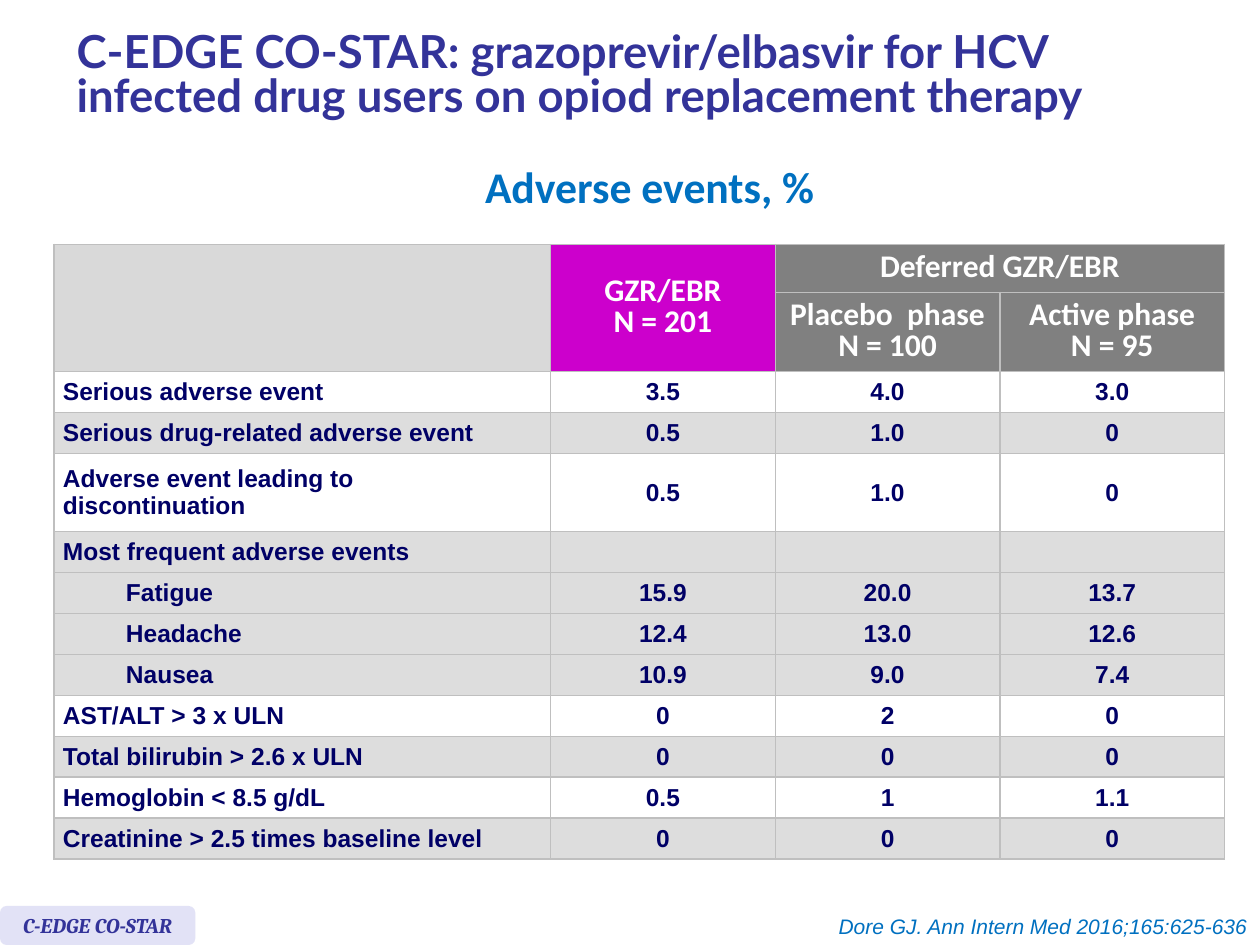
from lxml import etree
from pptx import Presentation
from pptx.dml.color import RGBColor
from pptx.enum.shapes import MSO_SHAPE
from pptx.enum.text import MSO_ANCHOR, MSO_AUTO_SIZE, PP_ALIGN
from pptx.oxml.ns import qn
from pptx.util import Inches, Pt

LEFT, CENTER, RIGHT = PP_ALIGN.LEFT, PP_ALIGN.CENTER, PP_ALIGN.RIGHT
TOP, MIDDLE = MSO_ANCHOR.TOP, MSO_ANCHOR.MIDDLE
FIT_SHAPE = MSO_AUTO_SIZE.SHAPE_TO_FIT_TEXT
ROUNDED = MSO_SHAPE.ROUNDED_RECTANGLE

# Content
TITLE = ("C-EDGE CO-STAR: grazoprevir/elbasvir for HCV infected drug users "
         "on opiod replacement therapy")
SUBTITLE = "Adverse events, %"
STUDY = "C-EDGE CO-STAR"
CITATION = "Dore GJ. Ann Intern Med 2016;165:625-636"

# row, column, last row, last column, paragraphs, fill
HEADERS = [
    (0, 0, 1, 0, [], "corner"),
    (0, 1, 1, 1, ["GZR/EBR\vN = 201"], "treated"),
    (0, 2, 0, 3, ["Deferred GZR/EBR"], "deferred"),
    (1, 2, 1, 2, ["Placebo  phase", "N = 100"], "deferred"),
    (1, 3, 1, 3, ["Active phase", "N = 95"], "deferred"),
]
# label, values, fill, indent
EVENTS = [
    ("Serious adverse event", ["3.5", "4.0", "3.0"], "white", 0),
    ("Serious drug-related adverse event", ["0.5", "1.0", "0"], "band", 0),
    ("Adverse event leading to discontinuation", ["0.5", "1.0", "0"], "white", 0),
    ("Most frequent adverse events", ["", "", ""], "band", 0),
    ("Fatigue", ["15.9", "20.0", "13.7"], "band", 0.5),
    ("Headache", ["12.4", "13.0", "12.6"], "band", 0.5),
    ("Nausea", ["10.9", "9.0", "7.4"], "band", 0.5),
    ("AST/ALT > 3 x ULN", ["0", "2", "0"], "white", 0),
    ("Total bilirubin > 2.6 x ULN", ["0", "0", "0"], "band", 0),
    ("Hemoglobin < 8.5 g/dL", ["0.5", "1", "1.1"], "white", 0),
    ("Creatinine > 2.5 times baseline level", ["0", "0", "0"], "band", 0),
]

COLORS = {
    "white": "FFFFFF", "band": "DDDDDD", "corner": "D9D9D9", "border": "BFBFBF",
    "treated": "CC00CC", "deferred": "808080", "body": "000066",
    "title": "333399", "accent": "0070C0", "badge": "E2E2F6",
}
FORMATS = {
    "title": dict(name="Lato", size=Pt(26), bold=True, color="title"),
    "subtitle": dict(name="Calibri", size=Pt(25), bold=True, color="accent"),
    "badge": dict(name="Cambria", size=Pt(12), bold=True, italic=True, color="title"),
    "citation": dict(name="Arial", size=Pt(12), italic=True, color="accent"),
    "header": dict(name="Calibri", size=Pt(18), bold=True, color="white"),
    "body": dict(name="Arial", size=Pt(14), bold=True, color="body"),
}

# Table geometry: special rows are fixed, the others share what is left
TABLE_BOX = (0.43, 1.94, 9.29, 4.88)
LABEL_WIDTH = 3.94
SPECIAL_ROWS = {0: 0.38, 1: 0.63, 4: 0.62}
N_ROWS, N_COLS = 2 + len(EVENTS), 4
ROW_HEIGHT = (TABLE_BOX[3] - sum(SPECIAL_ROWS.values())) / (N_ROWS - len(SPECIAL_ROWS))
VALUE_WIDTH = (TABLE_BOX[2] - LABEL_WIDTH) / (N_COLS - 1)


def rgb(key):
    return RGBColor.from_string(COLORS[key])


def write(tf, paragraphs, style, align=LEFT, spacing=None):
    for i, text in enumerate(paragraphs):
        p = tf.paragraphs[0] if i == 0 else tf.add_paragraph()
        p.text = text
        p.alignment = align
        p.line_spacing = spacing
        for r in p.runs:
            for attr, value in FORMATS[style].items():
                if attr == "color":
                    r.font.color.rgb = rgb(value)
                else:
                    setattr(r.font, attr, value)


def add_text(s, box, text, style, align=LEFT, spacing=None, anchor=TOP, wrap=False):
    tf = s.shapes.add_textbox(*map(Inches, box)).text_frame
    tf.word_wrap = wrap
    tf.vertical_anchor = anchor
    if not wrap:
        tf.auto_size = FIT_SHAPE
    write(tf, [text], style, align, spacing)


def format_cell(cell, fill, margin):
    cell.vertical_anchor = MIDDLE
    cell.margin_left = cell.margin_right = Inches(margin)
    cell.margin_top = cell.margin_bottom = 0
    tc_pr = cell._tc.get_or_add_tcPr()
    for side in ("a:lnL", "a:lnR", "a:lnT", "a:lnB"):
        ln = etree.SubElement(tc_pr, qn(side), w=str(Pt(1)))
        solid = etree.SubElement(ln, qn("a:solidFill"))
        etree.SubElement(solid, qn("a:srgbClr"), val=COLORS["border"])
    cell.fill.solid()
    cell.fill.fore_color.rgb = rgb(fill)


def add_events_table(s):
    table = s.shapes.add_table(N_ROWS, N_COLS, *map(Inches, TABLE_BOX)).table
    table.first_row = table.horz_banding = False
    for i, column in enumerate(table.columns):
        column.width = Inches(VALUE_WIDTH if i else LABEL_WIDTH)
    for i, row in enumerate(table.rows):
        row.height = Inches(SPECIAL_ROWS.get(i, ROW_HEIGHT))

    # Header cells
    for row, col, last_row, last_col, paragraphs, fill in HEADERS:
        for i in range(row, last_row + 1):
            for j in range(col, last_col + 1):
                format_cell(table.cell(i, j), fill, 0.1)
        cell = table.cell(row, col)
        if (row, col) != (last_row, last_col):
            cell.merge(table.cell(last_row, last_col))
        write(cell.text_frame, paragraphs, "header", CENTER, 0.8)

    # Event rows
    for i, (label, values, fill, indent) in enumerate(EVENTS, start=2):
        for j, text in enumerate([label] + values):
            cell = table.cell(i, j)
            format_cell(cell, fill, 0.07)
            write(cell.text_frame, [text], "body", CENTER if j else LEFT)
        if indent:
            p_pr = table.cell(i, 0).text_frame.paragraphs[0]._p.get_or_add_pPr()
            p_pr.set("marL", str(Inches(indent)))
            p_pr.set("lvl", "1")


def add_study_badge(s):
    sp = s.shapes.add_shape(ROUNDED, *map(Inches, (0, 7.19, 1.55, 0.31)))
    sp.shadow.inherit = False
    sp.fill.solid()
    sp.fill.fore_color.rgb = rgb("badge")
    sp.line.fill.background()
    sp.text_frame.word_wrap = False
    sp.text_frame.vertical_anchor = MIDDLE
    write(sp.text_frame, [STUDY], "badge", CENTER)


def main():
    prs = Presentation()
    prs.slide_width, prs.slide_height = Inches(10), Inches(7.5)
    s = prs.slides.add_slide(prs.slide_layouts[6])
    add_events_table(s)
    add_text(s, (3.67, 1.31, 2.97, 0.45), SUBTITLE, "subtitle", CENTER, Pt(23.6))
    add_study_badge(s)
    add_text(s, (0.51, 0.08, 9.13, 1.07), TITLE, "title", LEFT, Pt(25), MIDDLE, True)
    add_text(s, (6.53, 7.2, 3.47, 0.3), CITATION, "citation", RIGHT)
    prs.save("out.pptx")


if __name__ == "__main__":
    main()
